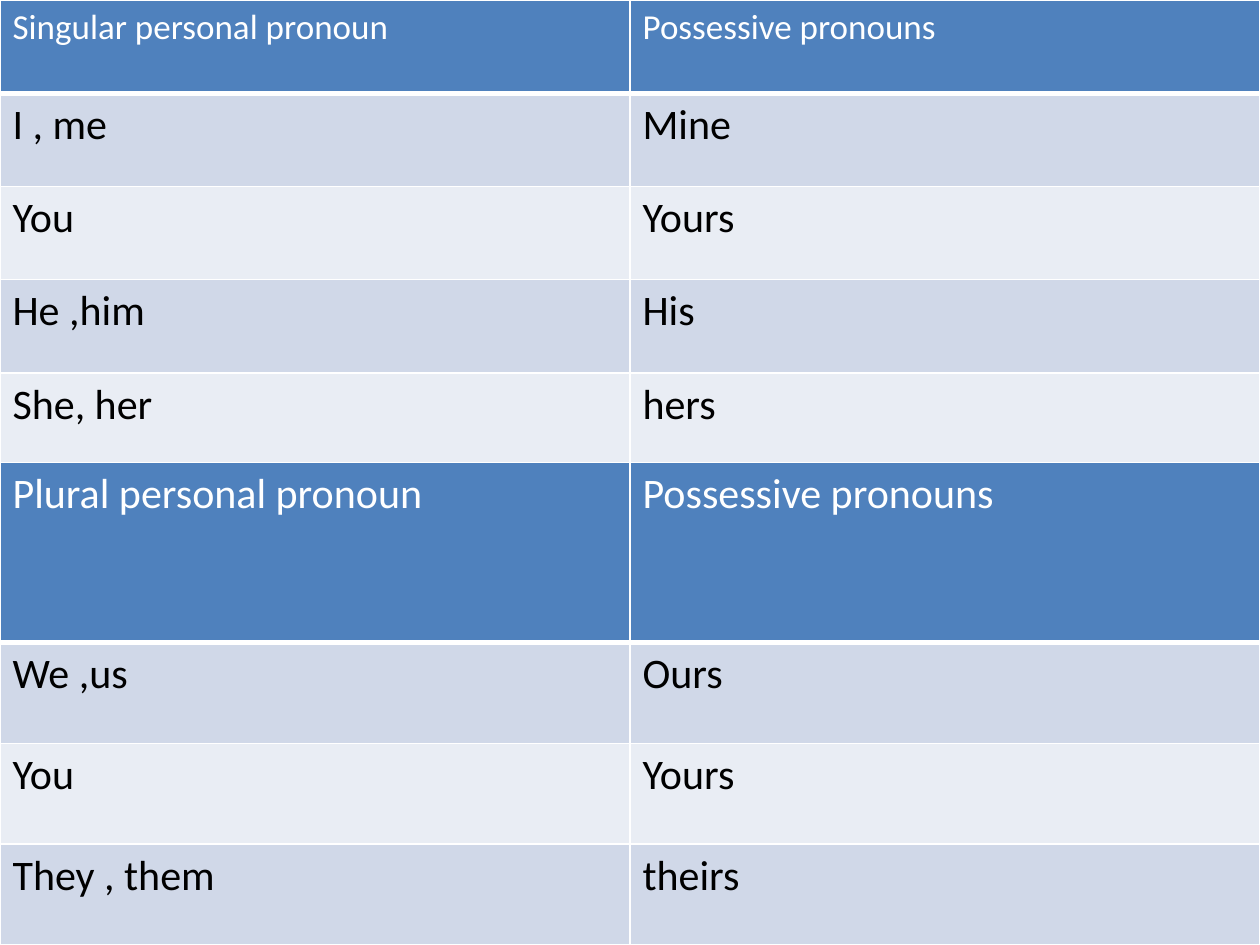
from lxml.etree import SubElement
from pptx import Presentation
from pptx.dml.color import RGBColor
from pptx.oxml.ns import qn
from pptx.util import Pt

UNIT = 9144  # EMU per px, 100 px to the inch
WIDE, HIGH = 1000, 750
HUES = {"head": "4F81BD", "odd": "D0D8E8", "even": "E9EDF4",
        "line": "FFFFFF", "light": "FFFFFF", "dark": "000000"}

SINGLE = [("Singular personal pronoun", "Possessive pronouns"),
          ("I , me", "Mine"), ("You", "Yours"),
          ("He ,him", "His"), ("She, her", "hers")]
PLURAL = [("Plural personal pronoun", "Possessive pronouns"),
          ("We ,us", "Ours"), ("You", "Yours"), ("They , them", "theirs")]


def px(count):
    return count * UNIT


def write(frame, text, size=24, hue="dark", font="Calibri"):
    run = frame.paragraphs[0].add_run()
    run.text = text
    run.font.size = Pt(size)
    run.font.name = font
    run.font.bold = False
    run.font.color.rgb = RGBColor.from_string(HUES[hue])


def edge(cell, base=1):
    """Draw the four cell borders; base is the bottom width in points."""
    props = cell._tc.get_or_add_tcPr()
    for side, width in zip("LRTB", (1, 1, 1, base)):
        line = SubElement(props, qn(f"a:ln{side}"), w=str(Pt(width)))
        fill = SubElement(line, qn("a:solidFill"))
        SubElement(fill, qn("a:srgbClr"), val=HUES["line"])


class Deck:
    def __init__(self):
        self.show = Presentation()
        self.show.slide_width, self.show.slide_height = px(WIDE), px(HIGH)
        self.slide = self.show.slides.add_slide(self.show.slide_layouts[6])

    def table(self, rows, top, tall, step, size=24):
        """Add a full-width table: a header tall px high, then rows of step."""
        highs = [tall] + [step] * (len(rows) - 1)
        grid = self.slide.shapes.add_table(
            len(rows), 2, 0, px(top), px(WIDE), px(sum(highs))).table
        grid.first_row = grid.horz_banding = False
        for r, (words, high) in enumerate(zip(rows, highs)):
            grid.rows[r].height = px(high)
            for c, text in enumerate(words):
                self.cell(grid.cell(r, c), text, r, size)

    def cell(self, cell, text, row, size):
        head = row == 0
        edge(cell, base=3 if head else 1)
        hue = "head" if head else "odd" if row % 2 else "even"
        cell.fill.solid()
        cell.fill.fore_color.rgb = RGBColor.from_string(HUES[hue])
        write(cell.text_frame, text, size=size if head else 24,
              hue="light" if head else "dark")


def main():
    deck = Deck()
    deck.table(SINGLE, top=0, tall=74, step=74, size=20)
    deck.table(PLURAL, top=367, tall=143, step=80)
    deck.show.save("out.pptx")


if __name__ == "__main__":
    main()
